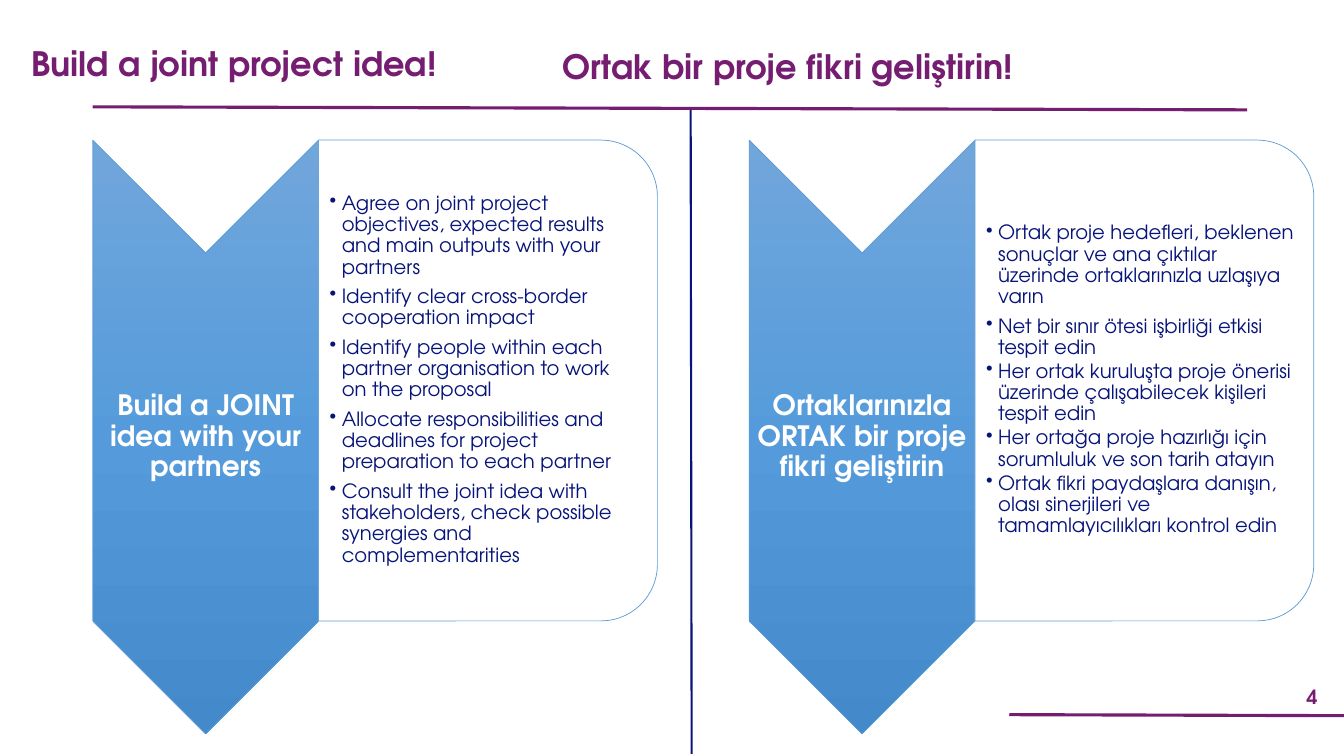
from copy import deepcopy

from lxml import etree
from pptx import Presentation
from pptx.dml.color import RGBColor
from pptx.enum.shapes import MSO_CONNECTOR, MSO_SHAPE
from pptx.enum.text import MSO_ANCHOR, PP_ALIGN
from pptx.oxml.ns import qn
from pptx.util import Inches, Pt

LINE = MSO_CONNECTOR.STRAIGHT
CHEVRON, PANEL = MSO_SHAPE.CHEVRON, MSO_SHAPE.ROUND_2_SAME_RECTANGLE
TOP, MIDDLE = MSO_ANCHOR.TOP, MSO_ANCHOR.MIDDLE
LEFT, CENTER, JUSTIFY = PP_ALIGN.LEFT, PP_ALIGN.CENTER, PP_ALIGN.JUSTIFY

FONT = "TeX Gyre Adventor"
PURPLE = RGBColor(0x75, 0x1D, 0x70)
NAVY = RGBColor(0x07, 0x14, 0x7A)
WHITE = RGBColor(0xFF, 0xFF, 0xFF)
EDGE_BLUE = RGBColor(0x5B, 0x9B, 0xD5)
LIGHT_BLUE = RGBColor(0x71, 0xA6, 0xDB)
MID_BLUE = RGBColor(0x55, 0x9B, 0xDB)
DARK_BLUE = RGBColor(0x44, 0x8A, 0xCA)

# Content
TITLES = [
    ("Build a joint project idea!", (0.21, 0.42, 9.73, 0.65)),
    ("Ortak bir proje fikri geliştirin!", (5.48, 0.45, 4.86, 0.52)),
]
PAGE_NUMBER = "4"
# Each column: chevron label, points, space after the first and the later points
COLUMNS = [
    ("Build a JOINT idea with your partners", [
        "Agree on joint project objectives, expected results and main outputs with your partners",
        "Identify clear cross-border cooperation impact",
        "Identify people within each partner organisation to work on the proposal",
        "Allocate responsibilities and deadlines for project preparation to each partner",
        "Consult the joint idea with stakeholders, check possible synergies and complementarities",
    ], (6, 6)),
    ("Ortaklarınızla ORTAK bir proje fikri geliştirin", [
        "Ortak proje hedefleri, beklenen sonuçlar ve ana çıktılar üzerinde ortaklarınızla uzlaşıya varın",
        "Net bir sınır ötesi işbirliği etkisi tespit edin",
        "Her ortak kuruluşta proje önerisi üzerinde çalışabilecek kişileri tespit edin",
        "Her ortağa proje hazırlığı için sorumluluk ve son tarih atayın",
        "Ortak fikri paydaşlara danışın, olası sinerjileri ve tamamlayıcılıkları kontrol edin",
    ], (6, 2.1)),
]
# Rules: start, end, colour, width
RULES = [
    ((0.92, 1.06), (12.37, 1.09), PURPLE, 2.25),
    ((10.01, 7.09), (13.35, 7.1), PURPLE, 2.25),
    ((6.85, 1.09), (6.86, 7.48), NAVY, 1.5),
]

# Layout
COLUMN_LEFT, COLUMN_STEP, COLUMN_TOP = 0.92, 6.51, 1.39
CHEVRON_W, CHEVRON_H = 2.24, 5.89
PANEL_W, PANEL_H = 3.36, 4.77
HANG = 0.12

prs = Presentation()
prs.slide_width, prs.slide_height = Inches(13.33), Inches(7.5)
slide = prs.slides.add_slide(prs.slide_layouts[6])


def add_rule(start, end, color, width):
    rule = slide.shapes.add_connector(LINE, *map(Inches, start + end))
    rule.line.color.rgb = color
    rule.line.width = Pt(width)
    etree.SubElement(rule._element.spPr, qn("a:effectLst"))


def add_text_frame(box, anchor, insets=None):
    frame = slide.shapes.add_textbox(*map(Inches, box)).text_frame
    frame.word_wrap = True
    frame.vertical_anchor = anchor
    if insets:
        (frame.margin_left, frame.margin_top,
         frame.margin_right, frame.margin_bottom) = map(Inches, insets)
    return frame


def write(paragraph, text, size, color, align, bold=True, spacing=0.9):
    paragraph.alignment = align
    paragraph.line_spacing = spacing
    run = paragraph.add_run()
    run.text = text
    run.font.name, run.font.size = FONT, Pt(size)
    run.font.bold, run.font.color.rgb = bold, color


def add_turned_shape(kind, left, top, width, height):
    """Shape turned by 90 degrees that covers the given upright area."""
    shift = (width - height) / 2
    shape = slide.shapes.add_shape(
        kind, *map(Inches, (left + shift, top - shift, height, width)))
    shape.rotation = 90
    shape.shadow.inherit = False
    shape.line.color.rgb = EDGE_BLUE
    shape.line.width = Pt(0.5)
    return shape


def shade_blue(shape):
    """Three-stop gradient that runs down the slide whatever the rotation."""
    fill = shape.fill
    fill.gradient()
    fill.gradient_angle = 270
    stop_list = shape._element.spPr.find(qn("a:gradFill")).find(qn("a:gsLst"))
    stop_list.insert(1, deepcopy(stop_list[0]))
    stops = zip(fill.gradient_stops, (0, 0.5, 1), (LIGHT_BLUE, MID_BLUE, DARK_BLUE))
    for stop, position, color in stops:
        stop.position = position
        stop.color.rgb = color
    stop_list.getparent().set("rotWithShape", "0")


def add_bullet(paragraph):
    props = paragraph._p.get_or_add_pPr()
    props.set("marL", str(Inches(HANG)))
    props.set("indent", str(-Inches(HANG)))
    etree.SubElement(props, qn("a:buChar")).set("char", "•")


# Header, footer and divider
for rule in RULES:
    add_rule(*rule)
for title, box in TITLES:
    write(add_text_frame(box, TOP).paragraphs[0], title, 24, PURPLE, JUSTIFY)
page_frame = add_text_frame((12.7, 6.73, 0.63, 0.36), MIDDLE)
write(page_frame.paragraphs[0], PAGE_NUMBER, 14, PURPLE, CENTER, spacing=1.0)

# Columns: chevron with label, panel with points
for column, (label, points, (first_gap, later_gap)) in enumerate(COLUMNS):
    left = COLUMN_LEFT + column * COLUMN_STEP
    panel_left = left + CHEVRON_W

    shade_blue(add_turned_shape(CHEVRON, left, COLUMN_TOP, CHEVRON_W, CHEVRON_H))
    label_box = (left, COLUMN_TOP + CHEVRON_W / 2, CHEVRON_W, CHEVRON_H - CHEVRON_W)
    label_frame = add_text_frame(label_box, MIDDLE, (0.01,) * 4)
    write(label_frame.paragraphs[0], label, 20, WHITE, CENTER)

    panel = add_turned_shape(PANEL, panel_left, COLUMN_TOP, PANEL_W, PANEL_H)
    panel.fill.solid()
    panel.fill.fore_color.rgb = WHITE
    white = panel._element.spPr.find(qn("a:solidFill"))[0]
    etree.SubElement(white, qn("a:alpha")).set("val", "90000")

    points_box = (panel_left, COLUMN_TOP + 0.16, PANEL_W - 0.17, PANEL_H - 0.33)
    points_frame = add_text_frame(points_box, MIDDLE, (0.11, 0.01, 0.01, 0.01))
    for index, point in enumerate(points):
        paragraph = points_frame.add_paragraph() if index else points_frame.paragraphs[0]
        add_bullet(paragraph)
        paragraph.level = 1
        paragraph.space_after = Pt(later_gap if index else first_gap)
        write(paragraph, point, 14, NAVY, LEFT, bold=False)

prs.save("out.pptx")
